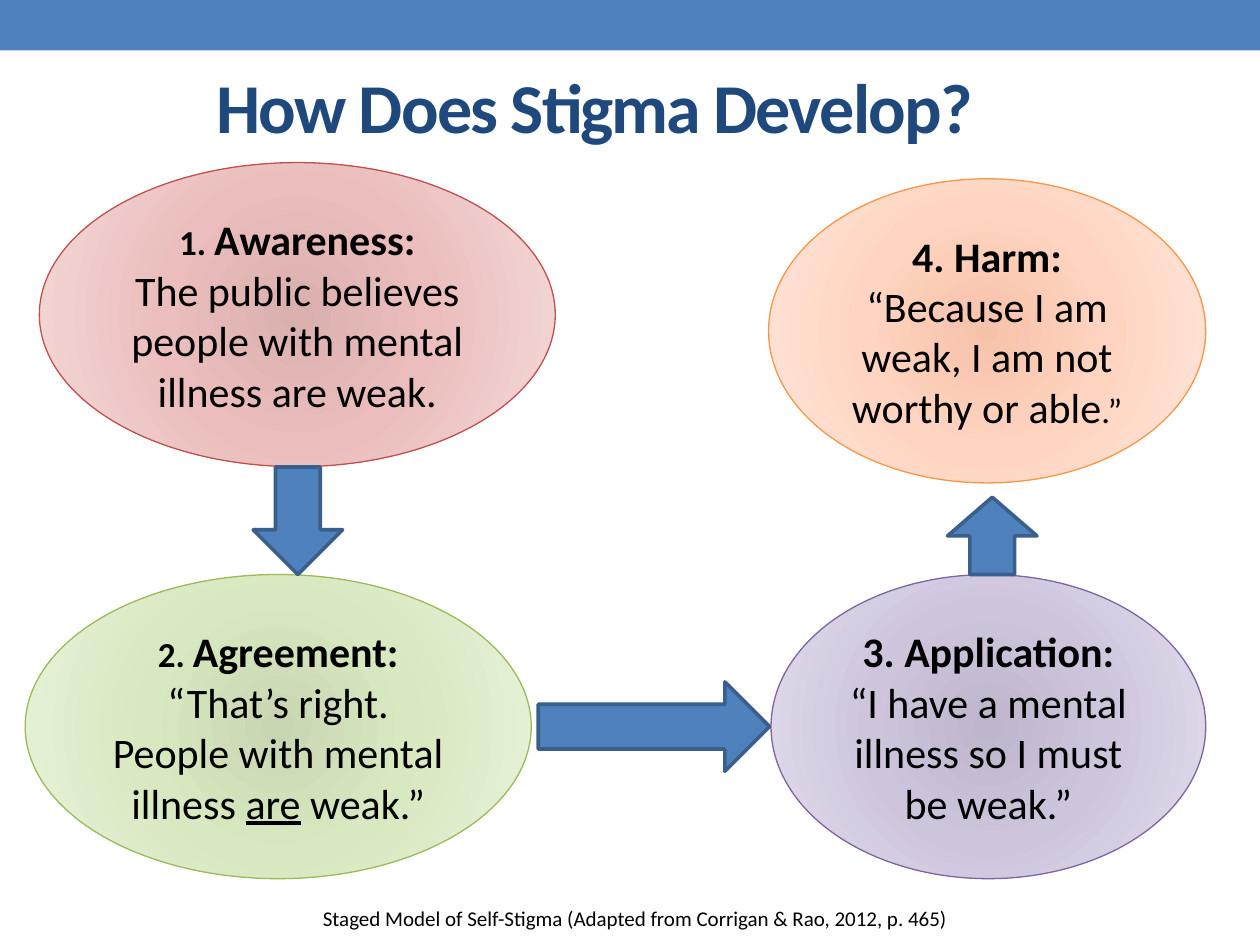
from lxml import etree
from pptx import Presentation
from pptx.dml.color import RGBColor
from pptx.enum.shapes import MSO_SHAPE
from pptx.enum.text import MSO_ANCHOR, MSO_AUTO_SIZE, PP_ALIGN
from pptx.oxml import parse_xml
from pptx.oxml.ns import nsdecls
from pptx.util import Pt

RECT, OVAL, ARROW = MSO_SHAPE.RECTANGLE, MSO_SHAPE.OVAL, MSO_SHAPE.RIGHT_ARROW
MIDDLE, CENTER = MSO_ANCHOR.MIDDLE, PP_ALIGN.CENTER
GROW = MSO_AUTO_SIZE.SHAPE_TO_FIT_TEXT

THEME = {
    "font": "Calibri",
    "blue": "4F81BD", "outline": "3A5F8C", "title": "1F497D", "text": "000000",
    "red": ("C0504D", "DAB0AF", "EBBEBD", "F4DBDB"),
    "green": ("9BBB59", "C8D7B2", "D8E8C0", "E9F3DC"),
    "purple": ("8064A2", "BFB6CD", "CEC5DD", "E4DFEC"),
    "orange": ("F79646", "F6C2AA", "FFD4C0", "FFE7DD"),
    "title_size": 40, "body_size": 24, "small_size": 20, "note_size": 12,
}
SMALL = THEME["small_size"]


def add_run(p, text, size=THEME["body_size"], color=THEME["text"],
            bold=False, underline=False, spacing=0):
    r = p.add_run()
    r.text = text
    r.font.name = THEME["font"]
    r.font.size = Pt(size)
    r.font.bold = bold
    r.font.underline = underline
    r.font.color.rgb = RGBColor.from_string(color)
    if spacing:
        r._r.get_or_add_rPr().set("spc", str(spacing * 100))


def add_shape(kind, box, line, width):
    sp = s.shapes.add_shape(kind, *map(Pt, box))
    sp.shadow.inherit = False
    sp.fill.solid()
    sp.fill.fore_color.rgb = RGBColor.from_string(THEME["blue"])
    if line:
        sp.line.color.rgb = RGBColor.from_string(line)
        sp.line.width = Pt(width)
    else:
        sp.line.fill.background()
    return sp


prs = Presentation()
prs.slide_width, prs.slide_height = Pt(720), Pt(540)
s = prs.slides.add_slide(prs.slide_layouts[6])

add_shape(RECT, (0, 0, 720, 28.8), None, 0)

captions = [
    ((-31.7, 21.6, 743, 77.8), "How Does Stigma Develop?",
     {"size": THEME["title_size"], "color": THEME["title"], "bold": True, "spacing": -1}),
    ((14.4, 509.8, 697, 29.5),
     "Staged Model of Self-Stigma (Adapted from Corrigan & Rao, 2012, p. 465)",
     {"size": THEME["note_size"]}),
]
for box, text, style in captions:
    tf = s.shapes.add_textbox(*map(Pt, box)).text_frame
    tf.word_wrap = True
    tf.vertical_anchor = MIDDLE
    p = tf.paragraphs[0]
    p.alignment = CENTER
    add_run(p, text, **style)

STAGE_HEIGHT = 173.8
stages = [
    ("red", 22.5, 92.9, 294.8,
     [("1. ", {"size": SMALL}), ("Awareness:", {})],
     [("The public believes people with mental illness are weak.", {})]),
    ("green", 14.4, 328.3, 289.2,
     [("2. ", {"size": SMALL}), ("Agreement:", {})],
     [("“That’s right. People with mental illness ", {}),
      ("are", {"underline": True}), (" weak.”", {})]),
    ("purple", 440.6, 328.3, 248.4,
     [("3. Application:", {})],
     [("“I have a mental illness so I must be weak.”", {})]),
    ("orange", 439.2, 102.2, 249.8,
     [("4. Harm:", {})],
     [("“Because I am weak, I am not worthy or able", {}), (".”", {"size": SMALL})]),
]
for name, x, y, w, heading, body in stages:
    line, *shades = THEME[name]
    sp = add_shape(OVAL, (x, y, w, STAGE_HEIGHT), line, 0.75)
    grad = parse_xml(
        f'<a:gradFill {nsdecls("a")} rotWithShape="1"><a:gsLst/><a:path path="circle">'
        '<a:fillToRect l="100000" t="100000" r="100000" b="100000"/></a:path></a:gradFill>')
    for pos, shade in zip((0, 45, 100), shades):
        gs = etree.SubElement(grad[0], grad[0].tag.replace("gsLst", "gs"), pos=str(pos * 1000))
        etree.SubElement(gs, gs.tag.replace("}gs", "}srgbClr"), val=shade)
    solid = sp._element.spPr.find(grad.tag.replace("gradFill", "solidFill"))
    solid.getparent().replace(solid, grad)

    tf = sp.text_frame
    tf.word_wrap = True
    tf.auto_size = GROW
    tf.vertical_anchor = MIDDLE
    for p, runs, bold in ((tf.paragraphs[0], heading, True), (tf.add_paragraph(), body, False)):
        p.alignment = CENTER
        for text, style in runs:
            add_run(p, text, bold=bold, **style)

ARROW_HEIGHT = 51.1
arrows = [(170.2, 297.6, 61.4, 90), (373.7, 415.2, 132.2, 0), (567, 306.2, 44.2, 270)]
for cx, cy, length, angle in arrows:
    box = (cx - length / 2, cy - ARROW_HEIGHT / 2, length, ARROW_HEIGHT)
    sp = add_shape(ARROW, box, THEME["outline"], 2.08)
    sp.rotation = angle

prs.save("out.pptx")
